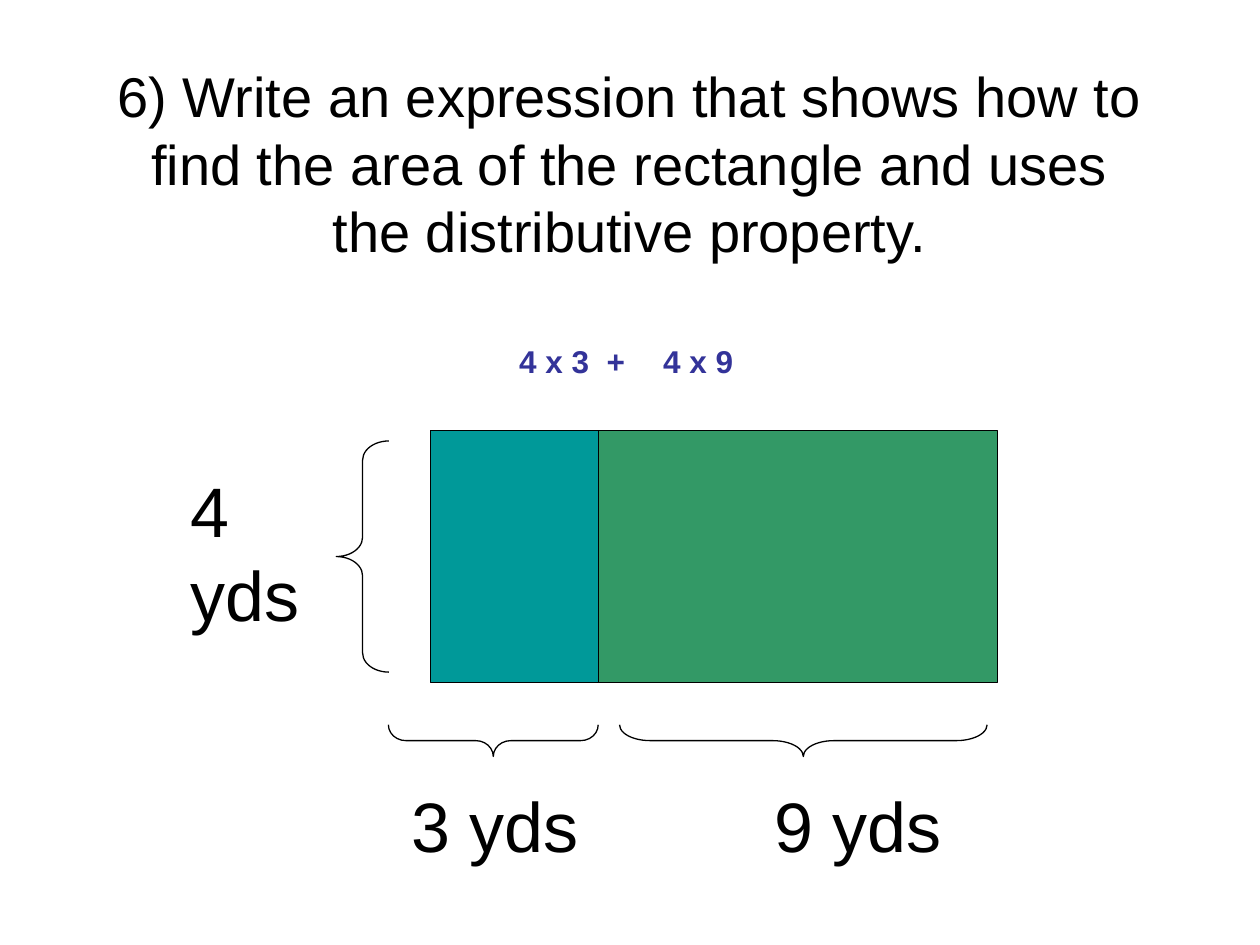
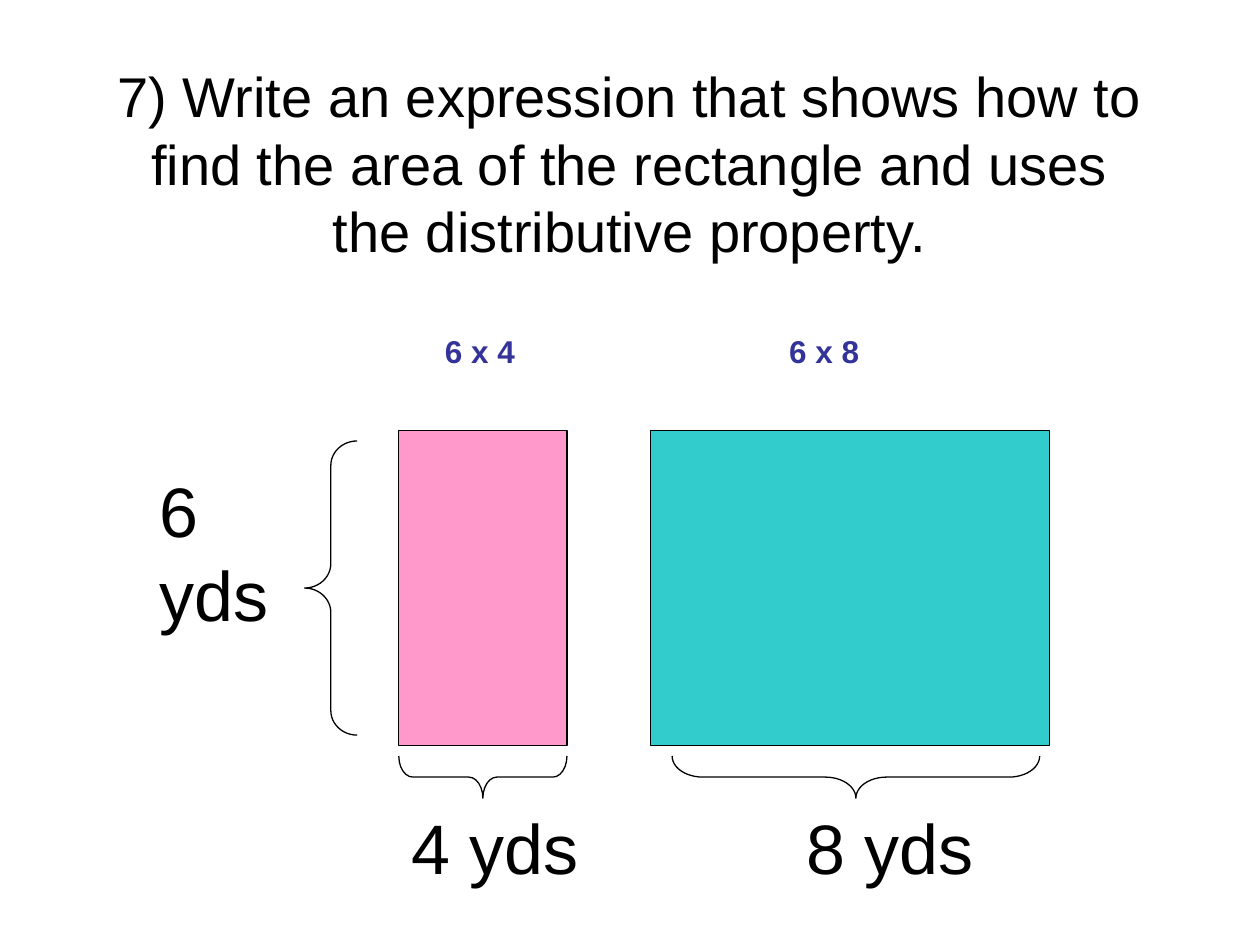
from pptx import Presentation
from pptx.dml.color import RGBColor
from pptx.enum.shapes import MSO_SHAPE
from pptx.enum.text import MSO_ANCHOR, PP_ALIGN
from pptx.util import Cm, Pt

RECT, BRACE = MSO_SHAPE.RECTANGLE, MSO_SHAPE.LEFT_BRACE
TOP, MIDDLE = MSO_ANCHOR.TOP, MSO_ANCHOR.MIDDLE
LEFT, CENTER = PP_ALIGN.LEFT, PP_ALIGN.CENTER

COLORS = {
    "ink": "000000",
    "answer": "333399",
    "teal": "009999",
    "green": "339966",
    "pink": "FF99CC",
    "aqua": "33CCCC",
}
FONT = "Arial"
QUESTION = ("{}) Write an expression that shows how to find the area of the "
            "rectangle and uses the distributive property.")
PAD = 0.25
RECT_TOP = 8.68


class Deck:
    def __init__(self):
        self.prs = Presentation()
        self.prs.slide_width, self.prs.slide_height = Cm(25.4), Cm(19.05)
        self.s = None

    def new_slide(self, number):
        self.s = self.prs.slides.add_slide(self.prs.slide_layouts[6])
        self.text(QUESTION.format(number), 1.9, 1.69, 21.59, 3.18, 32,
                  align=CENTER, anchor=MIDDLE)

    def text(self, text, x, y, w, h, size, color="ink", bold=False,
             align=LEFT, anchor=TOP, pad_left=PAD, pad_right=PAD):
        tf = self.s.shapes.add_textbox(Cm(x), Cm(y), Cm(w), Cm(h)).text_frame
        tf.word_wrap = True
        tf.vertical_anchor = anchor
        tf.margin_left, tf.margin_right = Cm(pad_left), Cm(pad_right)
        p = tf.paragraphs[0]
        p.text = text
        p.alignment = align
        p.font.name, p.font.size, p.font.bold = FONT, Pt(size), bold
        p.font.color.rgb = RGBColor.from_string(COLORS[color])

    def label(self, text, x, y, w, h=1.96, pad_left=PAD):
        self.text(text, x, y, w, h, 40, pad_left=pad_left)

    def product(self, text, x, y, w, align=LEFT, pad_right=PAD):
        self.text(text, x, y, w, 1.27, 18, "answer", True, align,
                  pad_right=pad_right)

    def shape(self, kind, x, y, w, h, fill=None):
        sp = self.s.shapes.add_shape(kind, Cm(x), Cm(y), Cm(w), Cm(h))
        sp.shadow.inherit = False
        if fill:
            sp.fill.solid()
            sp.fill.fore_color.rgb = RGBColor.from_string(COLORS[fill])
        else:
            sp.fill.background()
        sp.line.color.rgb = RGBColor.from_string(COLORS["ink"])
        sp.line.width = Pt(0.75)
        return sp

    def side_brace(self, x, y, depth, length):
        sp = self.shape(BRACE, x, y, depth, length)
        sp.adjustments[0] = length / 12 / depth
        return sp

    def bottom_brace(self, x, y, length, depth):
        """Brace that opens upwards; x and y are its visible top left."""
        shift = (length - depth) / 2
        sp = self.side_brace(x + shift, y - shift, depth, length)
        sp.rotation = 270

    def area_model(self, height, side, parts, brace_top, brace_depth, label_top):
        """Two rectangles; parts: (x, width, fill, brace x, brace length)."""
        for x, w, fill, brace_x, length in parts:
            self.shape(RECT, x, RECT_TOP, w, height, fill)
            self.bottom_brace(brace_x, brace_top, length, brace_depth)
        first_x = parts[0][0]
        self.side_brace(first_x - 1.9, RECT_TOP + 0.21, 1.06, height - 0.42)
        self.label(side, first_x - 5.08, 9.31, 3.18, 3.63)
        self.label_top = label_top

    def width_labels(self, first, second, second_x):
        self.label(first, 8.04, self.label_top, 4.23)
        self.label(second, second_x, self.label_top, 7.83, pad_left=1.43)


def main():
    deck = Deck()

    deck.new_slide(6)
    deck.area_model(5.08, "4 yds",
                    [(8.68, 3.39, "teal", 7.83, 4.23),
                     (12.07, 8.04, "green", 12.49, 7.41)],
                    brace_top=14.61, brace_depth=0.64, label_top=15.66)
    deck.width_labels("3 yds", "9 yds", 14.18)
    deck.product("4 x 3  +", 9.1, 6.77, 4.87, CENTER)
    deck.product("4 x 9", 13.12, 6.77, 5.29)

    deck.new_slide(7)
    deck.area_model(6.35, "6 yds",
                    [(8.04, 3.39, "pink", 8.04, 3.39),
                     (13.12, 8.04, "aqua", 13.55, 7.41)],
                    brace_top=15.24, brace_depth=0.85, label_top=16.09)
    deck.width_labels("4 yds", "8 yds", 14.82)
    deck.product("6 x 4", 8.26, 6.56, 3.18, CENTER, pad_right=0.6)
    deck.product("6 x 8", 15.66, 6.56, 4.02)

    deck.prs.save("out.pptx")


if __name__ == "__main__":
    main()
